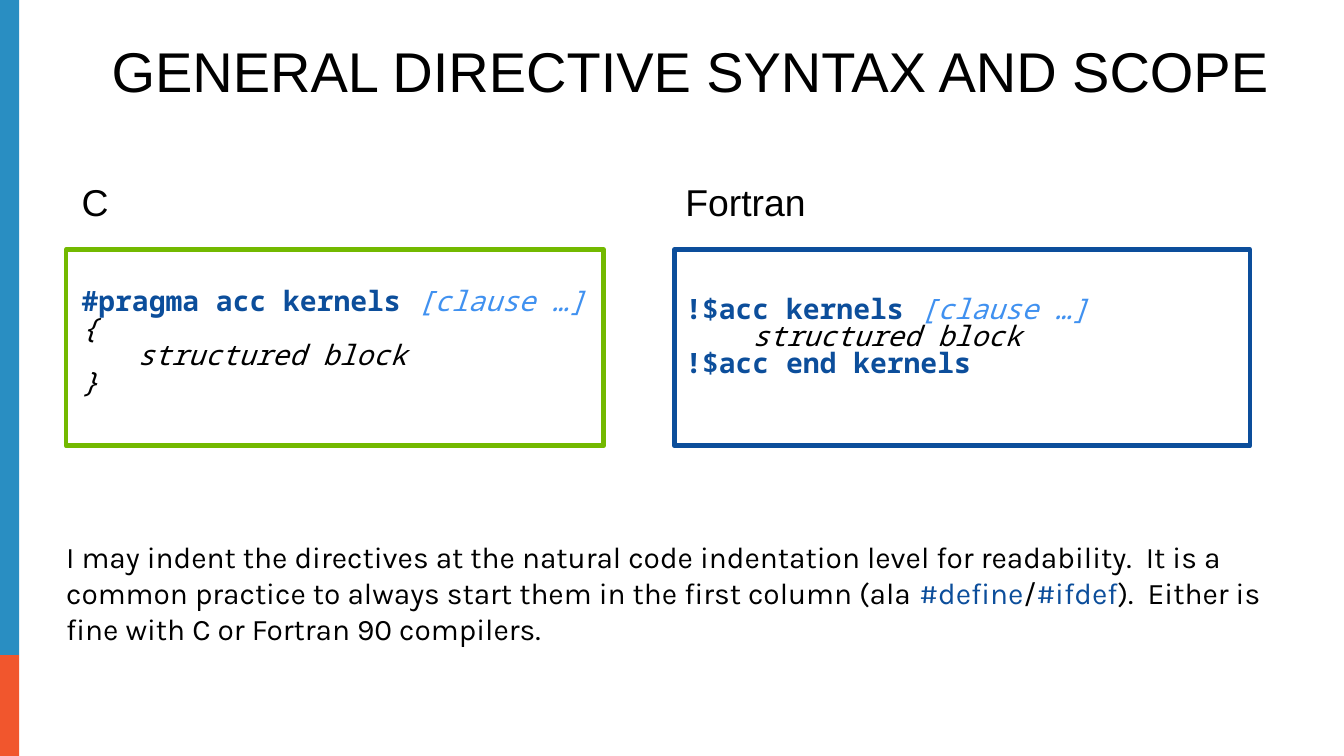
import pptx
import pptx.dml.color
import pptx.enum.shapes
import pptx.enum.text
import pptx.util

COLORS = {
    "black": "000000",
    "blue": "0C4E9B",
    "light blue": "4091F0",
    "green": "73B900",
    "sidebar blue": "298EC2",
    "sidebar orange": "F1562D",
}

presentation = pptx.Presentation()
presentation.slide_width = pptx.util.Inches(12)
presentation.slide_height = pptx.util.Inches(6.75)
slide = presentation.slides.add_slide(presentation.slide_layouts[6])


def place(left, top, width, height):
    """Turn percentages of the slide's width and height into lengths."""
    across = presentation.slide_width / 100
    down = presentation.slide_height / 100
    return round(left * across), round(top * down), round(width * across), round(height * down)


def add_run(paragraph, text, font_name, size, color, bold=False, italic=False):
    run = paragraph.add_run()
    run.text = text
    run.font.name = font_name
    run.font.size = pptx.util.Pt(size)
    run.font.bold = bold
    run.font.italic = italic
    run.font.color.rgb = pptx.dml.color.RGBColor.from_string(COLORS[color])


# Sidebar
for color, top, height in [("sidebar blue", 0, 86.67), ("sidebar orange", 86.67, 13.33)]:
    band = slide.shapes.add_shape(
        pptx.enum.shapes.MSO_SHAPE.RECTANGLE, *place(0, top, 1.42, height))
    band.shadow.inherit = False
    band.fill.solid()
    band.fill.fore_color.rgb = pptx.dml.color.RGBColor.from_string(COLORS[color])
    band.line.fill.background()

# Title
title = slide.shapes.add_textbox(*place(5, 4, 92.75, 10.52)).text_frame
title.word_wrap = True
title.vertical_anchor = pptx.enum.text.MSO_ANCHOR.BOTTOM
paragraph = title.paragraphs[0]
paragraph.alignment = pptx.enum.text.PP_ALIGN.CENTER
paragraph.line_spacing = 0.9
add_run(paragraph, "GENERAL DIRECTIVE SYNTAX AND SCOPE", "Arial", 36, "black")

# One column per language: text box, frame, gap above the code, code lines
languages = [
    ("C", (5.25, 23.7, 44.42, 42.52), (4.92, 33.04, 40, 25.93), "green", 42, [
        [("#pragma acc kernels ", "blue", "bold"), ("[clause …]", "light blue", "italic")],
        [("{", "black", "italic")],
        [("\tstructured block", "black", "italic")],
        [("}", "black", "italic")],
    ]),
    ("Fortran", (50.17, 23.7, 36.83, 38.22), (50.17, 33.04, 42.83, 25.93), "blue", 47, [
        [("!$acc kernels ", "blue", "bold"), ("[clause …]", "light blue", "italic")],
        [("    structured block", "black", "italic")],
        [("!$acc end kernels", "blue", "bold")],
    ]),
]
for language, text_area, frame_area, frame_color, gap, code_lines in languages:
    frame = slide.shapes.add_shape(
        pptx.enum.shapes.MSO_SHAPE.ROUNDED_RECTANGLE, *place(*frame_area))
    frame.adjustments[0] = 0
    frame.shadow.inherit = False
    frame.fill.background()
    frame.line.color.rgb = pptx.dml.color.RGBColor.from_string(COLORS[frame_color])
    frame.line.width = pptx.util.Pt(3)

    column = slide.shapes.add_textbox(*place(*text_area)).text_frame
    column.word_wrap = True
    heading = column.paragraphs[0]
    heading.line_spacing = 0.9
    add_run(heading, language, "Arial", 24, "black")

    code = column.add_paragraph()
    code.line_spacing = 0.8
    code.space_before = pptx.util.Pt(gap)
    for number, code_line in enumerate(code_lines):
        if number:
            code.add_line_break()
        for text, color, style in code_line:
            add_run(code, text, "Noto Sans Mono", 18, color,
                    bold=style == "bold", italic=style == "italic")

# Remark on indentation
remark = slide.shapes.add_textbox(*place(3.92, 70.4, 93.83, 19.26)).text_frame
remark.word_wrap = True
remark.margin_left = remark.margin_right = pptx.util.Inches(0.12)
remark.margin_top = remark.margin_bottom = pptx.util.Inches(0.06)
for text, color in [
    ("I may indent the directives at the natural code indentation level for readability.  "
     "It is a common practice to always start them in the first column (ala ", "black"),
    ("#define", "blue"),
    ("/", "black"),
    ("#ifdef", "blue"),
    (").  Either is fine with C or Fortran 90 compilers.", "black"),
]:
    add_run(remark.paragraphs[0], text, "Karla", 19.2, color)

presentation.save("out.pptx")
